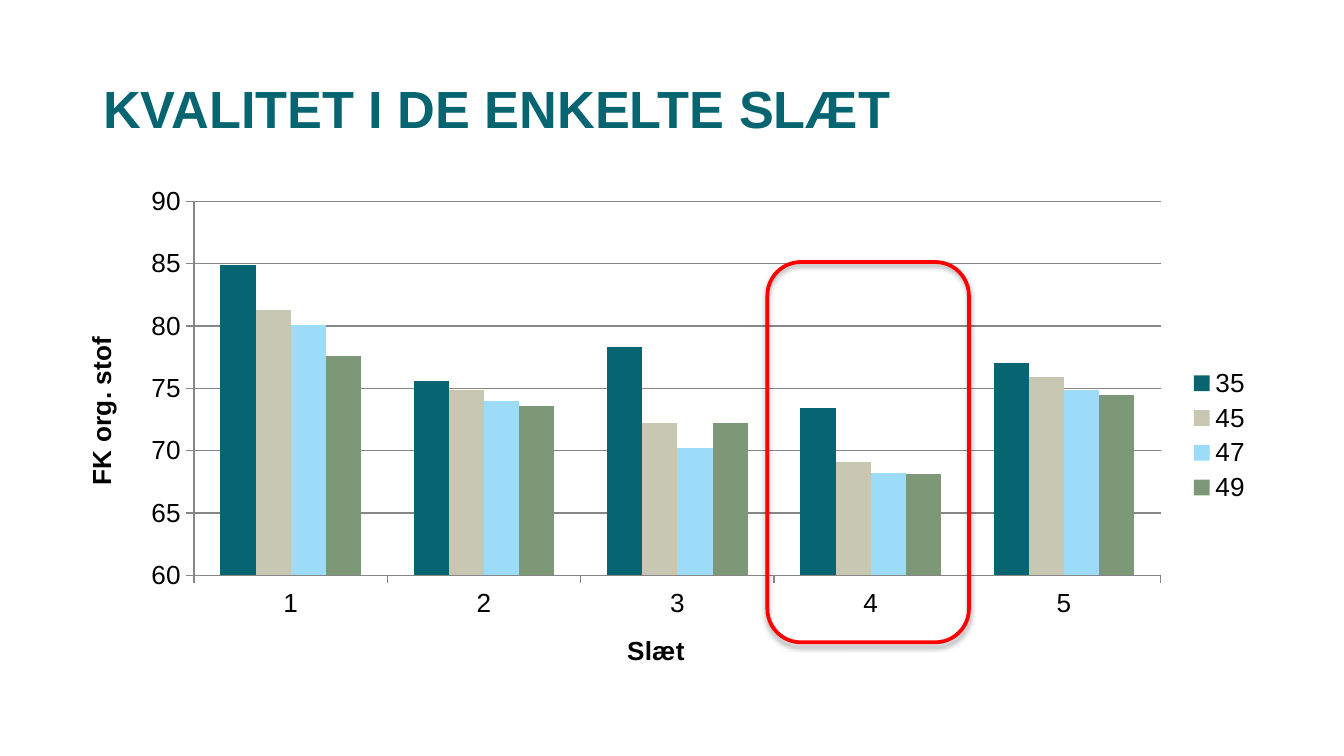
from lxml.etree import SubElement
from pptx import Presentation
from pptx.chart.data import CategoryChartData
from pptx.dml.color import RGBColor
from pptx.enum.chart import XL_CHART_TYPE, XL_LEGEND_POSITION, XL_TICK_MARK
from pptx.enum.shapes import MSO_SHAPE
from pptx.enum.text import MSO_ANCHOR
from pptx.oxml import parse_xml
from pptx.oxml.ns import nsdecls, qn
from pptx.util import Inches, Pt

CUTS = ["1", "2", "3", "4", "5"]
DIGESTIBILITY = {
    "35": ("076471", (84.9, 75.6, 78.3, 73.4, 77)),
    "45": ("C8C7B2", (81.3, 74.9, 72.2, 69.1, 75.9)),
    "47": ("9DDCF9", (80.1, 74, 70.2, 68.2, 74.9)),
    "49": ("7C9877", (77.6, 73.6, 72.2, 68.1, 74.5)),
}


def rgb(value):
    return RGBColor.from_string(value)


def style_font(font, size, color="000000", bold=False):
    font.name = "Arial"
    font.size = Pt(size)
    font.bold = bold
    font.color.rgb = rgb(color)


def write(frame, text, **style):
    frame.text = text
    style_font(frame.paragraphs[0].runs[0].font, **style)


def manual_layout(modes, **percents):
    """Return a chart layout with places in percent of the chart's size."""
    layout = parse_xml(f"<c:layout {nsdecls('c')}/>")
    manual = SubElement(layout, qn("c:manualLayout"))
    fractions = {name: value / 100 for name, value in percents.items()}
    for name, value in {**modes, "xMode": "edge", "yMode": "edge", **fractions}.items():
        SubElement(manual, qn(f"c:{name}")).set("val", str(value))
    return layout


def replace_layout(part, layout, index):
    for automatic in part.findall(qn("c:layout")):
        part.remove(automatic)
    part.insert(index, layout)


class SlideBuilder:
    title_color = "076471"
    axis_color = "868686"
    label_size = 14

    def __init__(self, slide):
        self.shapes = slide.shapes

    def title(self, text, *box):
        heading = self.shapes.add_textbox(*map(Inches, box))
        frame = heading.text_frame
        frame.word_wrap = True
        frame.vertical_anchor = MSO_ANCHOR.MIDDLE
        write(frame, text, size=28, color=self.title_color, bold=True)

    def axis(self, axis, title):
        write(axis.axis_title.text_frame, title, size=self.label_size, bold=True)
        style_font(axis.tick_labels.font, self.label_size)
        axis.major_tick_mark = XL_TICK_MARK.OUTSIDE
        axis.format.line.color.rgb = rgb(self.axis_color)

    def column_chart(self, categories, series, category_title, value_title, *box):
        data = CategoryChartData()
        data.categories = categories
        for name, (_, values) in series.items():
            data.add_series(name, values)
        chart = self.shapes.add_chart(
            XL_CHART_TYPE.COLUMN_CLUSTERED, *map(Inches, box), data
        ).chart
        style_font(chart.font, 10)
        chart.has_title = False

        plot = chart.plots[0]
        plot.gap_width = 150
        plot.overlap = 0
        plot.vary_by_categories = False
        for columns, (color, _) in zip(plot.series, series.values()):
            columns.format.fill.solid()
            columns.format.fill.fore_color.rgb = rgb(color)

        self.axis(chart.category_axis, category_title)
        self.axis(chart.value_axis, value_title)
        scale = chart.value_axis
        scale.minimum_scale, scale.maximum_scale, scale.major_unit = 60, 90, 5
        scale.has_major_gridlines = True
        scale.major_gridlines.format.line.color.rgb = rgb(self.axis_color)

        chart.has_legend = True
        chart.legend.position = XL_LEGEND_POSITION.RIGHT
        chart.legend.include_in_layout = False
        style_font(chart.legend.font, self.label_size)

        plot_area = chart.element.find(".//" + qn("c:plotArea"))
        inner = manual_layout({"layoutTarget": "inner"}, x=11.3, y=4.9, w=80.1, h=72.1)
        replace_layout(plot_area, inner, 0)
        value_heading = plot_area.find(qn("c:valAx")).find(qn("c:title"))
        replace_layout(value_heading, manual_layout({}, x=1.8, y=30), 1)

    def highlight(self, color, *box):
        frame = self.shapes.add_shape(MSO_SHAPE.ROUNDED_RECTANGLE, *map(Inches, box))
        frame.fill.background()
        frame.line.color.rgb = rgb(color)
        frame.line.width = Pt(2)
        frame.shadow.inherit = False
        effects = frame.element.spPr.find(qn("a:effectLst"))
        effects.append(parse_xml(
            f'<a:outerShdw {nsdecls("a")} blurRad="{Pt(3.1)}" dist="{Pt(1.8)}" '
            'dir="5400000" rotWithShape="0"><a:srgbClr val="000000">'
            '<a:alpha val="35000"/></a:srgbClr></a:outerShdw>'
        ))


def main():
    deck = Presentation()
    deck.slide_width = Inches(10)
    deck.slide_height = deck.slide_width * 9 // 16
    builder = SlideBuilder(deck.slides.add_slide(deck.slide_layouts[6]))
    builder.title("KVALITET I DE ENKELTE SLÆT", 0.67, 0.33, 8.83, 0.94)
    builder.column_chart(
        CUTS, DIGESTIBILITY, "Slæt", "FK org. stof", 0.43, 1.31, 8.98, 3.86
    )
    builder.highlight("FF0000", 5.71, 1.95, 1.5, 2.83)
    deck.save("out.pptx")


if __name__ == "__main__":
    main()
